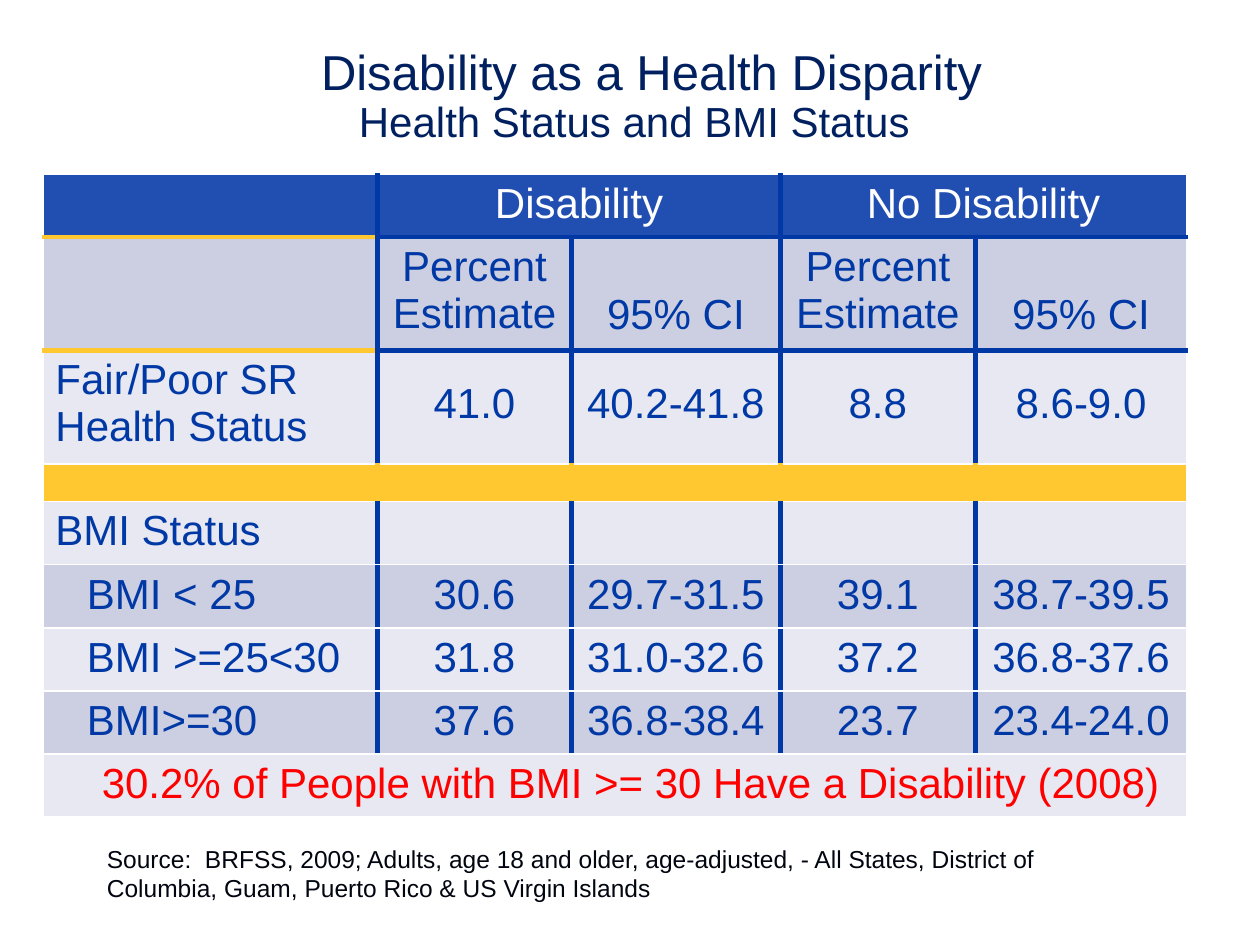
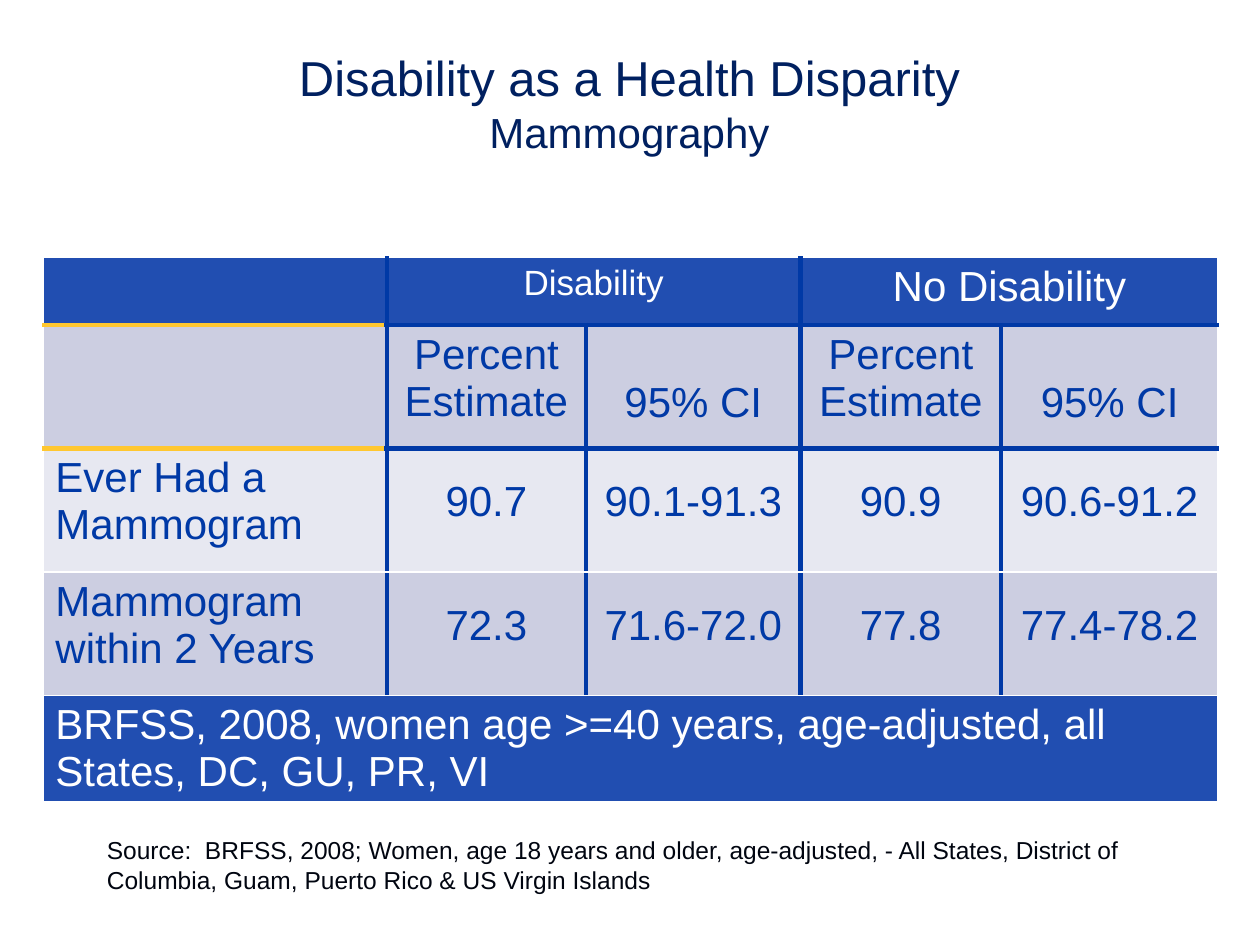
"""Build two slides of tables on disability as a health disparity."""
from dataclasses import dataclass

from lxml import etree
from pptx import Presentation
from pptx import util as u
from pptx.dml.color import RGBColor
from pptx.enum import text
from pptx.oxml.ns import qn


@dataclass(frozen=True)
class Theme:
    """Colours, font and type sizes shared by the slides."""
    font: str = "Arial"
    navy: str = "002060"
    blue: str = "0039A6"
    header: str = "214EB1"
    gold: str = "FFC730"
    dark: str = "CCCEE1"
    light: str = "E7E8F1"
    white: str = "FFFFFF"
    red: str = "FF0000"
    ink: str = "000510"
    title_size: int = 28
    body_size: int = 24
    small_size: int = 20
    source_size: int = 14


THEME = Theme()
TITLE = "Disability as a Health Disparity"
COLUMN_SHARES = (2.66, 1.54, 1.66, 1.55, 1.68)
SPANS = {"header": (1, 2, 2), "note": (5,), "closing": (5,)}
LINE_DROP, HALF_LINE_DROP = 0.43, 0.24
HEADER = ["", "Disability", "No Disability"]
MEASURES = ["", "Percent Estimate", "95% CI", "Percent Estimate", "95% CI"]

HEALTH = {
    "title_box": (0.67, 0.25, 9, 0.84),
    "title_anchor": text.MSO_ANCHOR.TOP,
    "subtitle": "Health Status and BMI Status",
    "subtitle_box": (0.75, 0.3, 8.57, 0.91),
    "table_box": (0.34, 1.38, 9.08, 5.1),
    "disability_size": THEME.body_size,
    "rows": [
        ("header", 0.5, THEME.header, HEADER),
        ("measures", 0.9, THEME.dark, MEASURES),
        ("tall", 0.9, THEME.light, ["Fair/Poor SR Health Status", "41.0", "40.2-41.8", "8.8", "8.6-9.0"]),
        ("band", 0.3, THEME.gold, [""] * 5),
        ("group", 0.5, THEME.light, ["BMI Status", "", "", "", ""]),
        ("item", 0.5, THEME.dark, ["BMI < 25", "30.6", "29.7-31.5", "39.1", "38.7-39.5"]),
        ("item", 0.5, THEME.light, ["BMI >=25<30", "31.8", "31.0-32.6", "37.2", "36.8-37.6"]),
        ("item", 0.5, THEME.dark, ["BMI>=30", "37.6", "36.8-38.4", "23.7", "23.4-24.0"]),
        ("note", 0.5, THEME.light, ["30.2% of People with BMI >= 30 Have a Disability (2008)"]),
    ],
    "source": "Source:  BRFSS, 2009; Adults, age 18 and older, age-adjusted, - All States, "
              "District of Columbia, Guam, Puerto Rico & US Virgin Islands",
    "source_box": (0.75, 6.65, 7.77, 0.67),
}
MAMMOGRAPHY = {
    "title_box": (0.71, 0.29, 8.57, 1.04),
    "title_anchor": text.MSO_ANCHOR.MIDDLE,
    "subtitle": "Mammography",
    "subtitle_box": None,
    "table_box": (0.34, 2.04, 9.33, 4.32),
    "disability_size": THEME.small_size,
    "rows": [
        ("header", 0.54, THEME.header, HEADER),
        ("measures", 0.98, THEME.dark, MEASURES),
        ("tall", 0.98, THEME.light, ["Ever Had a Mammogram", "90.7", "90.1-91.3", "90.9", "90.6-91.2"]),
        ("tall", 0.98, THEME.dark, ["Mammogram within 2 Years", "72.3", "71.6-72.0", "77.8", "77.4-78.2"]),
        ("closing", 0.84, THEME.header,
         ["BRFSS, 2008, women age >=40 years, age-adjusted, all States, DC, GU, PR, VI"]),
    ],
    "source": "Source:  BRFSS, 2008; Women, age 18 years and older, age-adjusted, - All States, "
              "District of Columbia, Guam, Puerto Rico & US Virgin Islands",
    "source_box": (0.75, 6.58, 8.57, 0.67),
}


def write(paragraph, words, size=THEME.body_size, color=THEME.blue, centred=False, indent=0):
    """Add a formatted run to a paragraph."""
    paragraph.alignment = text.PP_ALIGN.CENTER if centred else text.PP_ALIGN.LEFT
    if indent:
        properties = paragraph._p.get_or_add_pPr()
        properties.set("marL", str(u.Inches(indent)))
        properties.set("indent", "0")
    run = paragraph.add_run()
    run.text = words
    run.font.name = THEME.font
    run.font.size = u.Pt(size)
    run.font.color.rgb = RGBColor.from_string(color)


def add_text(slide, box, words, anchor=text.MSO_ANCHOR.TOP, **style):
    """Add a wrapping text box."""
    frame = slide.shapes.add_textbox(*map(u.Inches, box)).text_frame
    frame.word_wrap = True
    frame.vertical_anchor = anchor
    write(frame.paragraphs[0], words, **style)


def add_title(slide, content):
    """Place the title, with its subtitle below or in a separate box."""
    title = slide.shapes.title
    title.left, title.top, title.width, title.height = map(u.Inches, content["title_box"])
    frame = title.text_frame
    frame.auto_size = text.MSO_AUTO_SIZE.NONE
    frame.vertical_anchor = content["title_anchor"]
    paragraph = frame.paragraphs[0]
    write(paragraph, TITLE, size=THEME.title_size, color=THEME.navy, centred=True)
    if content["subtitle_box"]:
        frame.margin_top = u.Inches(0.08)
        add_text(slide, content["subtitle_box"], content["subtitle"],
                 anchor=text.MSO_ANCHOR.BOTTOM, color=THEME.navy, centred=True)
    else:
        paragraph.add_line_break()
        write(paragraph, content["subtitle"], color=THEME.navy, centred=True)


def vertical_edge(kind, column):
    """Give colour and width of the line left of a column."""
    if column in (0, len(COLUMN_SHARES)):
        return THEME.white, 1
    return (THEME.gold if kind == "band" else THEME.blue), 3


def horizontal_edge(row, column):
    """Give colour and width of the line above a row."""
    if row not in (1, 2):
        return THEME.white, 1
    return (THEME.blue if column else THEME.gold), 3


def draw_borders(cell, edges):
    """Set the cell lines named by side."""
    properties = cell._tc.get_or_add_tcPr()
    for side, (color, width) in edges.items():
        line = etree.SubElement(properties, qn(f"a:ln{side}"), w=str(u.Pt(width)))
        fill = etree.SubElement(line, qn("a:solidFill"))
        etree.SubElement(fill, qn("a:srgbClr"), val=color)


def fill_cell(cell, words, kind, column, size):
    """Write a cell according to the kind of its row."""
    if not words:
        cell.margin_top = cell.margin_bottom = 0
        return
    if kind == "measures" and words == "95% CI":
        cell.margin_top = u.Inches(LINE_DROP)
    elif kind == "tall" and column:
        cell.margin_top = u.Inches(HALF_LINE_DROP)
    color = {"header": THEME.white, "closing": THEME.white, "note": THEME.red}.get(kind, THEME.blue)
    indented = kind == "note" or (kind == "item" and column == 0)
    write(cell.text_frame.paragraphs[0], words, size=size, color=color,
          centred=column > 0 or kind == "note", indent=0.25 if indented else 0)


def add_data_table(slide, content):
    """Draw the table, its merged cells and its lines."""
    rows, box = content["rows"], content["table_box"]
    frame = slide.shapes.add_table(len(rows), len(COLUMN_SHARES), *map(u.Inches, box))
    table = frame.table
    table.first_row = table.horz_banding = False
    for column, share in zip(table.columns, COLUMN_SHARES):
        column.width = u.Inches(box[2] * share / sum(COLUMN_SHARES))
    for row, (kind, height, fill, words) in enumerate(rows):
        table.rows[row].height = u.Inches(height)
        column = 0
        for span, entry in zip(SPANS.get(kind, (1,) * 5), words):
            cell, end = table.cell(row, column), column + span
            if span > 1:
                cell.merge(table.cell(row, end - 1))
            draw_borders(cell, {
                "L": vertical_edge(kind, column), "R": vertical_edge(kind, end),
                "T": horizontal_edge(row, column), "B": horizontal_edge(row + 1, column)})
            cell.fill.solid()
            cell.fill.fore_color.rgb = RGBColor.from_string(fill)
            size = content["disability_size"] if entry == "Disability" else THEME.body_size
            fill_cell(cell, entry, kind, column, size)
            column = end


def main():
    """Build and save the presentation."""
    presentation = Presentation()
    presentation.slide_width, presentation.slide_height = u.Inches(10), u.Inches(7.5)
    for content in (HEALTH, MAMMOGRAPHY):
        slide = presentation.slides.add_slide(presentation.slide_layouts[5])
        add_title(slide, content)
        add_data_table(slide, content)
        add_text(slide, content["source_box"], content["source"],
                 size=THEME.source_size, color=THEME.ink)
    presentation.save("out.pptx")


if __name__ == "__main__":
    main()
